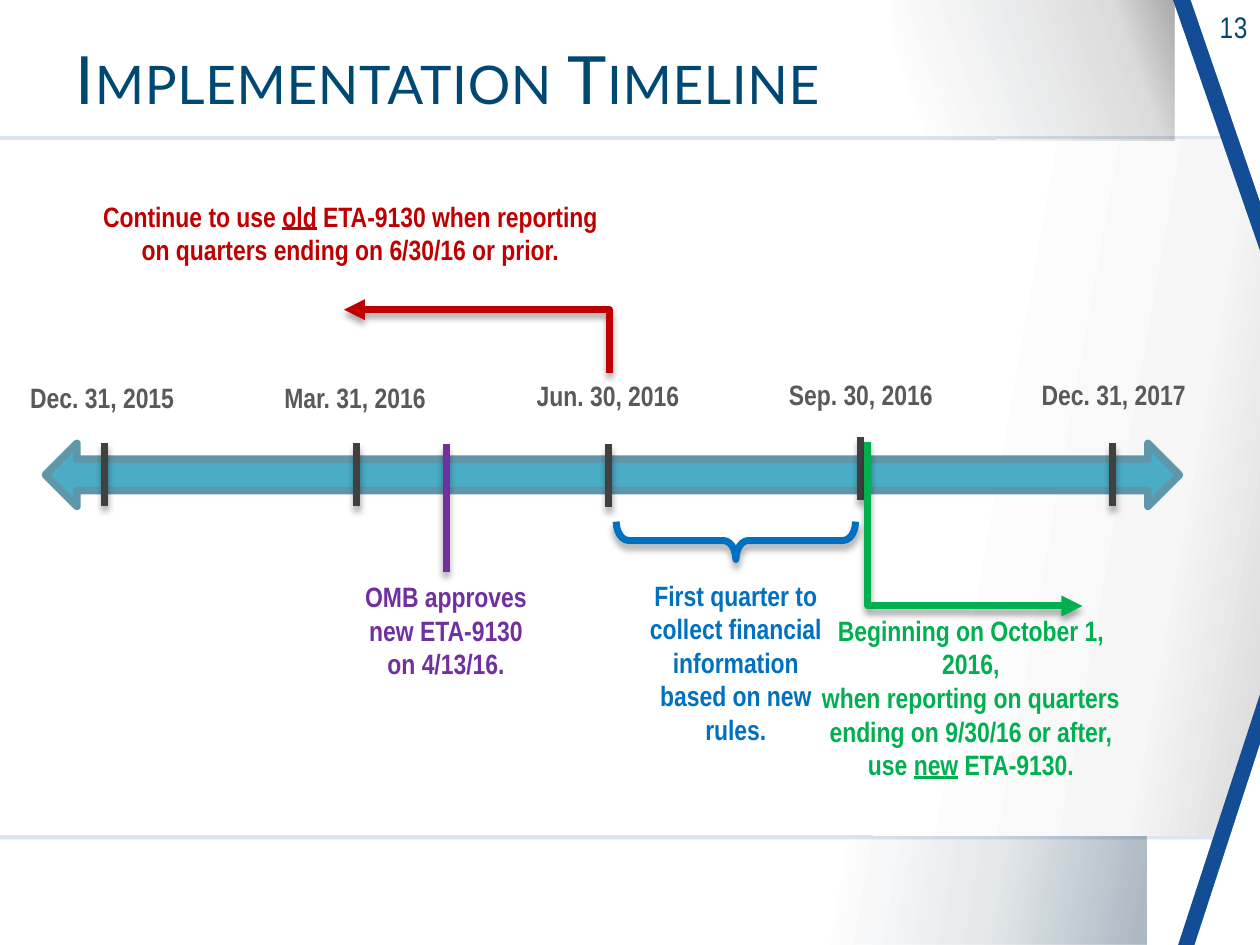
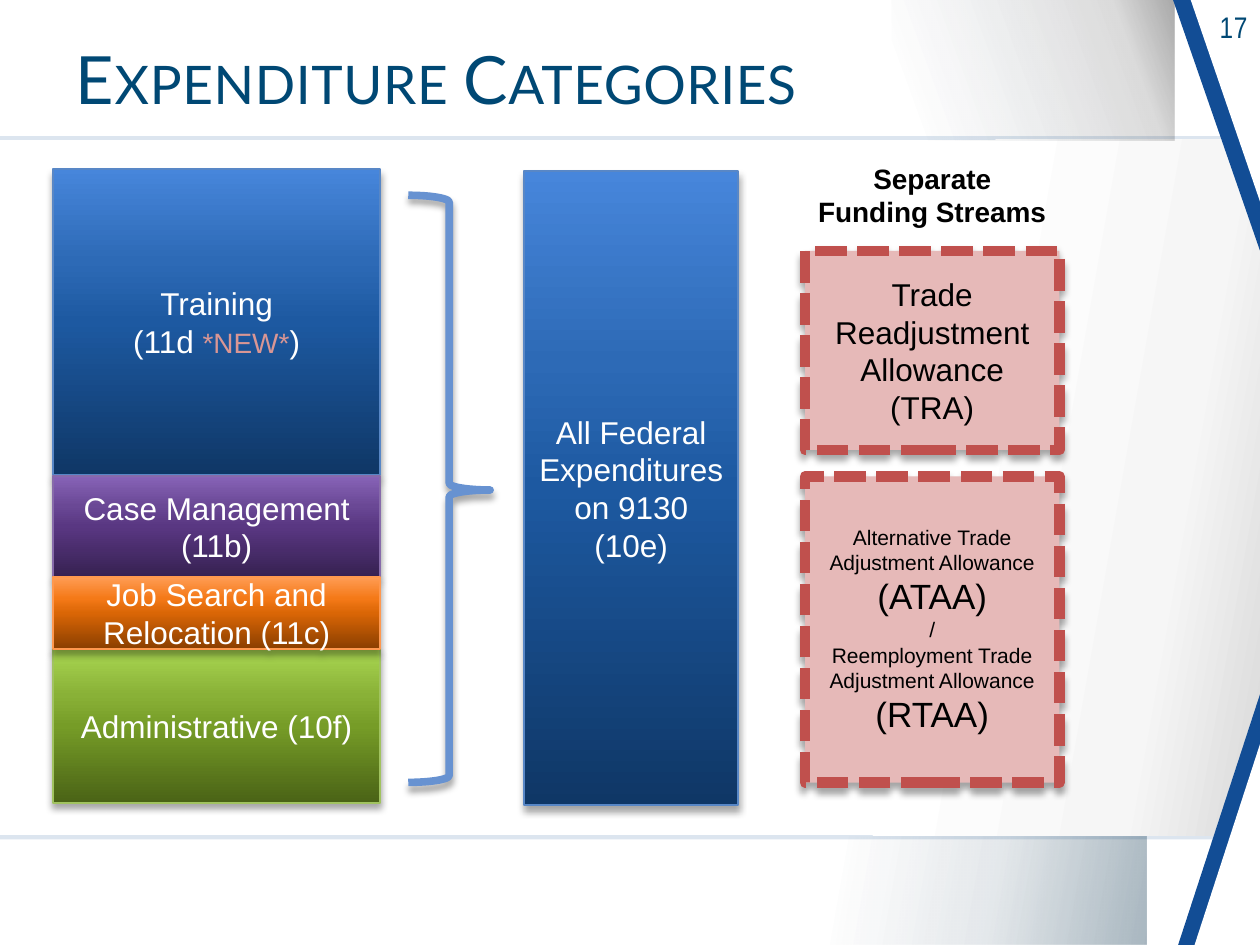
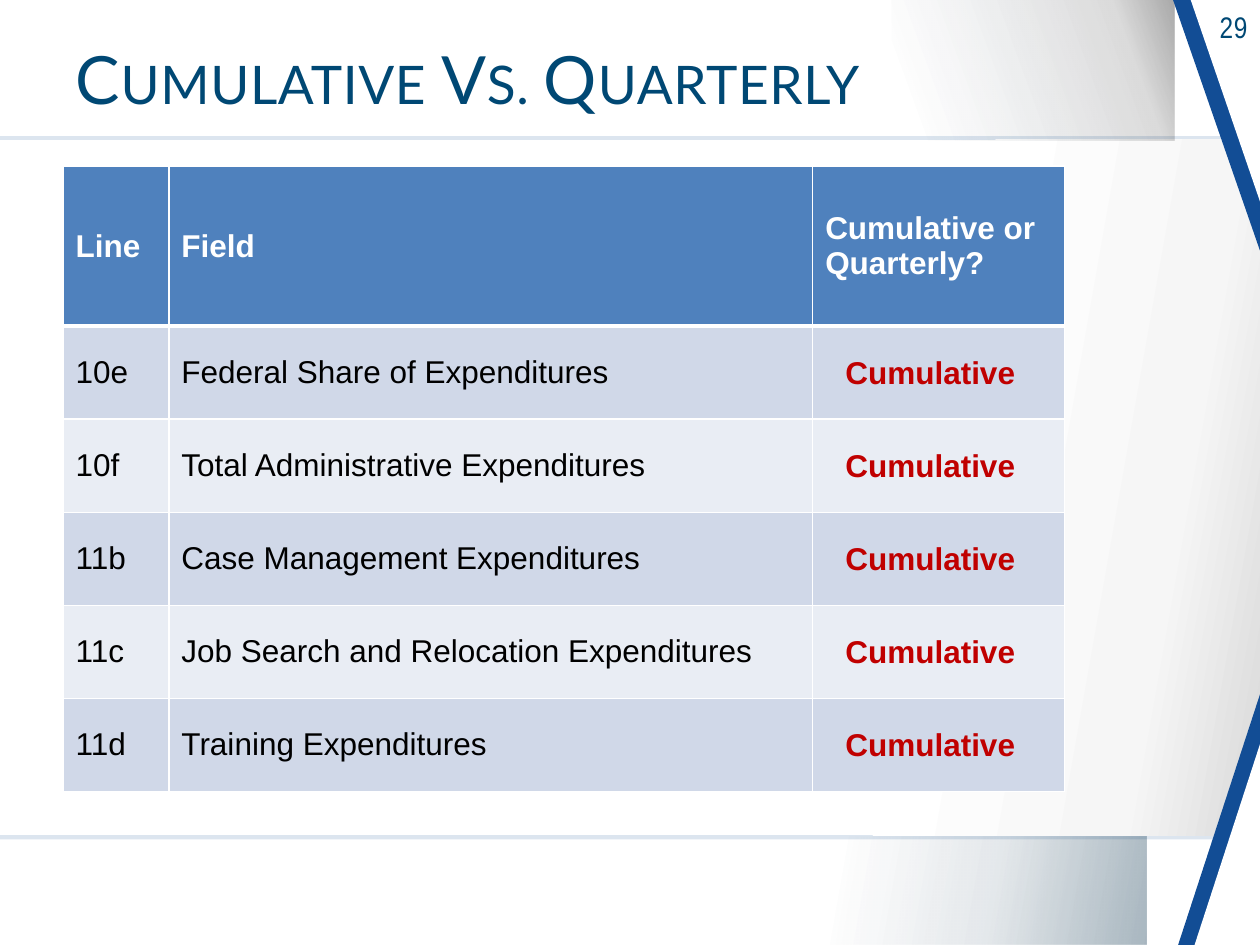
from pptx import Presentation
from pptx.dml.color import RGBColor
from pptx.enum.dml import MSO_LINE
from pptx.enum.shapes import MSO_CONNECTOR, MSO_SHAPE
from pptx.enum.text import MSO_ANCHOR, MSO_AUTO_SIZE, PP_ALIGN
from pptx.oxml import parse_xml
from pptx.oxml.ns import nsdecls, qn
from pptx.util import Pt

COLORS = {
    "white": "FFFFFF", "black": "000000", "title": "004874",
    "frame": "DCE5EF", "ribbon": "124D95", "corner": "002C47",
    "panel light": "F6F6F6", "panel dark": "D9D9D9",
    "arrow": "4BACC6", "arrow edge": "5F97AA", "date": "595959", "tick": "404040",
    "red": "C00000", "purple": "7030A0", "blue": "0070C0", "green": "00B050",
    "new": "D99694", "brace": "6792D1", "stream": "E6B9B8", "stream edge": "C0504D",
    "federal edge": "5887C6", "admin edge": "A1C360",
    "case edge": "876BAA", "search edge": "FF984E",
    "header": "4F81BD", "odd row": "D0D8E8", "even row": "E9EDF4",
}
GLOSS = {
    "federal": ["0F3766", "1D59A1", "2D6AB6", "4786DB"],
    "admin": ["4A6316", "769C27", "89B137", "A9D651"],
    "case": ["372152", "593782", "6A4895", "8763B7"],
    "search": ["8B3F00", "DA6606", "F47917", "FF9C54"],
}
GLOSS_STOPS = {
    name: [(stop, shade, 100) for stop, shade in zip((0, 50, 70, 100), shades)]
    for name, shades in GLOSS.items()
}


def style(shape, fill=None, angle=270, edge=None, width=1, dash=None, shadow=False, arrow=False):
    """Fill with a colour name or a list of (position, hex, opacity) stops; set edge and shadow."""
    properties = shape.element.spPr
    if isinstance(fill, list):
        stops = "".join(
            f'<a:gs pos="{stop * 1000}"><a:srgbClr val="{shade}">'
            f'<a:alpha val="{opacity * 1000}"/></a:srgbClr></a:gs>'
            for stop, shade, opacity in fill)
        properties.insert(2, parse_xml(
            f'<a:gradFill {nsdecls("a")} rotWithShape="1"><a:gsLst>{stops}</a:gsLst>'
            f'<a:lin ang="{angle * 60000}" scaled="0"/></a:gradFill>'))
    elif fill:
        shape.fill.solid()
        shape.fill.fore_color.rgb = RGBColor.from_string(COLORS[fill])
    elif hasattr(shape, "fill"):
        shape.fill.background()
    if edge:
        shape.line.color.rgb = RGBColor.from_string(COLORS[edge])
        shape.line.width = Pt(width)
        if dash:
            shape.line.dash_style = dash
    else:
        shape.line.fill.background()
    if arrow:
        properties.find(qn("a:ln")).append(parse_xml(f'<a:tailEnd {nsdecls("a")} type="triangle"/>'))
    blur = (f'<a:outerShdw blurRad="{Pt(4)}" dist="{Pt(3)}" dir="5400000" rotWithShape="0">'
            '<a:srgbClr val="000000"><a:alpha val="35000"/></a:srgbClr></a:outerShdw>')
    properties.append(parse_xml(
        f'<a:effectLst {nsdecls("a")}>{blur if shadow else ""}</a:effectLst>'))


def write_text(frame, *paragraphs, size=18, color="black", font="Arial", bold=False,
               align=PP_ALIGN.CENTER, anchor=MSO_ANCHOR.TOP, tracking=None):
    """Each paragraph is a string or a list of (text, run overrides)."""
    frame.word_wrap = True
    frame.vertical_anchor = anchor
    for index, content in enumerate(paragraphs):
        paragraph = frame.add_paragraph() if index else frame.paragraphs[0]
        paragraph.alignment = align
        for text, change in [(content, {})] if isinstance(content, str) else content:
            run = paragraph.add_run()
            run.text = text
            run.font.name = font
            run.font.size = Pt(change.get("size", size))
            run.font.bold = bold
            if change.get("underline"):
                run.font.underline = True
            run.font.color.rgb = RGBColor.from_string(COLORS[change.get("color", color)])
            if tracking:
                run.font._element.set("spc", str(round(tracking * 100)))


prs = Presentation()
prs.slide_width, prs.slide_height = Pt(720), Pt(540)
layout = prs.slide_layouts[5]

# Titles and slide numbers
slides = []
for title, number in [("Implementation Timeline", "13"), ("Expenditure Categories", "17"),
                      ("Cumulative Vs. Quarterly", "29")]:
    slide = prs.slides.add_slide(layout)
    heading = slide.shapes.title
    heading.left, heading.top, heading.width, heading.height = map(Pt, (36, 17.3, 544.3, 61.2))
    heading.text_frame.auto_size = MSO_AUTO_SIZE.NONE
    write_text(heading.text_frame, title, size=38, color="title", font="Lato",
               align=PP_ALIGN.LEFT, anchor=MSO_ANCHOR.MIDDLE, tracking=0.4)
    heading.text_frame.paragraphs[0].line_spacing = 0.85
    heading.text_frame.paragraphs[0].runs[0].font._element.set("cap", "small")
    page = slide.shapes.add_textbox(*map(Pt, (662.4, 1.4, 57.6, 28)))
    write_text(page.text_frame, number, size=17, color="title", font="Arial Narrow",
               align=PP_ALIGN.RIGHT, tracking=0.4)
    slides.append(slide)
timeline, categories, comparison = slides

# Shared backdrop, moved to the layout behind every slide
white, corner, black = COLORS["white"], COLORS["corner"], COLORS["black"]
panel = [(0, white, 100), (72, white, 100),
         (90, COLORS["panel light"], 100), (100, COLORS["panel dark"], 100)]
lower_corner = [(10, corner, 0), (56, corner, 11), (100, corner, 34)]
upper_corner = [(10, corner, 0), (81, black, 14), (100, black, 34)]
backdrop = [
    (MSO_SHAPE.RECTANGLE, (0, 77.8, 720, 401.8), "frame", 0, False),
    (MSO_SHAPE.RECTANGLE, (0, 79.9, 720, 397.4), panel, 10, False),
    (MSO_SHAPE.RECTANGLE, (463, 478, 192.2, 62), lower_corner, 10, False),
    (MSO_SHAPE.RECTANGLE, (509.8, 0, 161.3, 80.6), upper_corner, 340, False),
    (MSO_SHAPE.ISOSCELES_TRIANGLE, (670.3, 0, 49.7, 143.3), "ribbon", 0, True),
    (MSO_SHAPE.ISOSCELES_TRIANGLE, (680.4, 0, 39.6, 115.2), "white", 0, True),
    (MSO_SHAPE.ISOSCELES_TRIANGLE, (673.2, 396.7, 46.8, 143.3), "ribbon", 0, False),
    (MSO_SHAPE.ISOSCELES_TRIANGLE, (682.6, 425.2, 37.4, 114.8), "white", 0, False),
]
for index, (preset, box, fill, angle, flipped) in enumerate(backdrop):
    piece = timeline.shapes.add_shape(preset, *map(Pt, box))
    style(piece, fill, angle)
    if preset == MSO_SHAPE.ISOSCELES_TRIANGLE:
        piece.adjustments[0] = 1
    if flipped:
        piece.element.spPr.find(qn("a:xfrm")).set("flipV", "1")
    piece.element.nvSpPr.cNvPr.set("id", str(100 + index))
    layout.shapes.element.insert(2 + index, piece.element)

# Timeline: axis and quarter dates
axis = timeline.shapes.add_shape(MSO_SHAPE.LEFT_RIGHT_ARROW, *map(Pt, (26, 253.4, 648, 36)))
style(axis, "arrow", edge="arrow edge", width=4.33)
quarters = [("Dec. 31, 2015", 214, 253), ("Mar. 31, 2016", 214, 253.4),
            ("Jun. 30, 2016", 213, 254), ("Sep. 30, 2016", 212, 250),
            ("Dec. 31, 2017", 212.4, 253.4)]
markers = []
for index, (date, date_top, tick_top) in enumerate(quarters):
    label = timeline.shapes.add_textbox(*map(Pt, (8 + 144.5 * index, date_top, 100.8, 26.6)))
    write_text(label.text_frame, date, size=16, color="date", font="Arial Narrow", bold=True)
    tick = 60 + 144 * index
    markers.append((tick, tick_top, tick, tick_top + 36, "tick"))

# Timeline: first quarter brace
quarter_brace = timeline.shapes.add_shape(MSO_SHAPE.RIGHT_BRACE, *map(Pt, (409.7, 240.5, 21.6, 136.8)))
quarter_brace.rotation = 90
quarter_brace.adjustments[0] = 0.333
style(quarter_brace, edge="blue", width=4, shadow=True)

# Timeline: ticks, approval mark and turning arrows
markers += [(254.9, 254, 254.9, 327, "purple"),
            (496, 252.7, 618.5, 346.3, "green"),
            (348.2, 213, 196.6, 177, "red")]
for x1, y1, x2, y2, color in markers:
    turning = x1 != x2
    kind = MSO_CONNECTOR.ELBOW if turning else MSO_CONNECTOR.STRAIGHT
    marker = timeline.shapes.add_connector(kind, *map(Pt, (x1, y1, x2, y2)))
    style(marker, edge=color, width=4, shadow=True, arrow=turning)
    if turning:
        geometry = marker.element.spPr.find(qn("a:prstGeom"))
        geometry.find(qn("a:avLst")).append(
            parse_xml(f'<a:gd {nsdecls("a")} name="adj1" fmla="val 0"/>'))

# Timeline: explanations
underlined = {"underline": True}
explanations = [
    ((49, 110.2, 302.4, 46), "red",
     [[("Continue to use ", {}), ("old", underlined),
       (" ETA-9130 when reporting on quarters ending on 6/30/16 or prior.", {})]]),
    ((197.3, 327.6, 115.2, 65.5), "purple", ["OMB approves new ETA-9130 on 4/13/16."]),
    ((362.9, 326.9, 115.2, 108), "blue",
     ["First quarter to collect financial information based on new rules."]),
    ((456.5, 347, 196.6, 104.4), "green",
     ["Beginning on October 1, 2016,",
      "when reporting on quarters ending on 9/30/16 or after,",
      [("use ", {}), ("new", underlined), (" ETA-9130.", {})]]),
]
for box, color, lines in explanations:
    explanation = timeline.shapes.add_textbox(*map(Pt, box))
    write_text(explanation.text_frame, *lines, size=16, color=color, font="Arial Narrow", bold=True)

# Categories: expenditure stack and federal total
expenditures = [
    ((30.2, 96.5, 187.2, 175), "federal",
     ["Training", [("(11d ", {}), ("*NEW*", {"size": 16, "color": "new"}), (")", {})]]),
    ((30.2, 371, 187.2, 87.8), "admin", ["Administrative (10f)"]),
    ((30.2, 272, 187.2, 57.6), "case", ["Case Management (11b)"]),
    ((30.2, 329.8, 187.2, 41), "search", ["Job Search and Relocation (11c)"]),
    ((299.5, 97.9, 122.4, 362.2), "federal", ["All Federal Expenditures on 9130", "(10e)"]),
]
for box, name, lines in expenditures:
    block = categories.shapes.add_shape(MSO_SHAPE.RECTANGLE, *map(Pt, box))
    style(block, GLOSS_STOPS[name], edge=f"{name} edge", shadow=True)
    write_text(block.text_frame, *lines, color="white", anchor=MSO_ANCHOR.MIDDLE)

sum_brace = categories.shapes.add_shape(MSO_SHAPE.RIGHT_BRACE, *map(Pt, (233.3, 111.6, 46.8, 335.5)))
sum_brace.adjustments[1] = 0.502
style(sum_brace, edge="brace", width=4.33, shadow=True)

# Categories: separate funding streams
streams_heading = categories.shapes.add_textbox(*map(Pt, (460, 88.6, 145.4, 46)))
write_text(streams_heading.text_frame, "Separate Funding Streams", size=16, bold=True)
streams = [
    (143.3, 113.8, 18, ["Trade Readjustment Allowance", "(TRA)"]),
    (272.2, 175, 12,
     [[("Alternative Trade Adjustment Allowance ", {}), ("(ATAA)", {"size": 20})], "/",
      [("Reemployment Trade Adjustment Allowance ", {}), ("(RTAA)", {"size": 20})]]),
]
for top, height, size, lines in streams:
    stream = categories.shapes.add_shape(MSO_SHAPE.RECTANGLE, *map(Pt, (460, top, 145.4, height)))
    style(stream, "stream", edge="stream edge", width=6, dash=MSO_LINE.SQUARE_DOT, shadow=True)
    write_text(stream.text_frame, *lines, size=size, anchor=MSO_ANCHOR.MIDDLE)

# Comparison: table of lines
rows = [
    ("Line", "Field", "Cumulative or Quarterly?"),
    ("10e", "Federal Share of Expenditures", ""),
    ("10f", "Total Administrative Expenditures", ""),
    ("11b", "Case Management Expenditures", ""),
    ("11c", "Job Search and Relocation Expenditures", ""),
    ("11d", "Training Expenditures", ""),
]
row_height = 53.2
fields = comparison.shapes.add_table(len(rows), 3, *map(Pt, (36, 95, 572.4, 357.4))).table
for column, width in zip(fields.columns, (60.5, 367.9, 144)):
    column.width = Pt(width)
for r, row in enumerate(rows):
    fields.rows[r].height = Pt(row_height if r else 91.4)
    for c, text in enumerate(row):
        cell = fields.cell(r, c)
        cell.fill.solid()
        shade = "header" if r == 0 else "odd row" if r % 2 else "even row"
        cell.fill.fore_color.rgb = RGBColor.from_string(COLORS[shade])
        cell.vertical_anchor = MSO_ANCHOR.MIDDLE
        if text:
            write_text(cell.text_frame, text, color="black" if r else "white", bold=r == 0,
                       align=PP_ALIGN.LEFT, anchor=MSO_ANCHOR.MIDDLE)
        for position, side in enumerate("LRTB"):
            weight = 3 if (r, side) in [(0, "B"), (1, "T")] else 1
            cell._tc.get_or_add_tcPr().insert(position, parse_xml(
                f'<a:ln{side} {nsdecls("a")} w="{Pt(weight)}"><a:solidFill>'
                f'<a:srgbClr val="{white}"/></a:solidFill></a:ln{side}>'))

# Comparison: answers over the last column
for index in range(len(rows) - 1):
    answer = comparison.shapes.add_textbox(*map(Pt, (476, 198 + row_height * index, 114.5, 28.8)))
    write_text(answer.text_frame, "Cumulative", color="red", bold=True, align=PP_ALIGN.LEFT)

prs.save("out.pptx")
